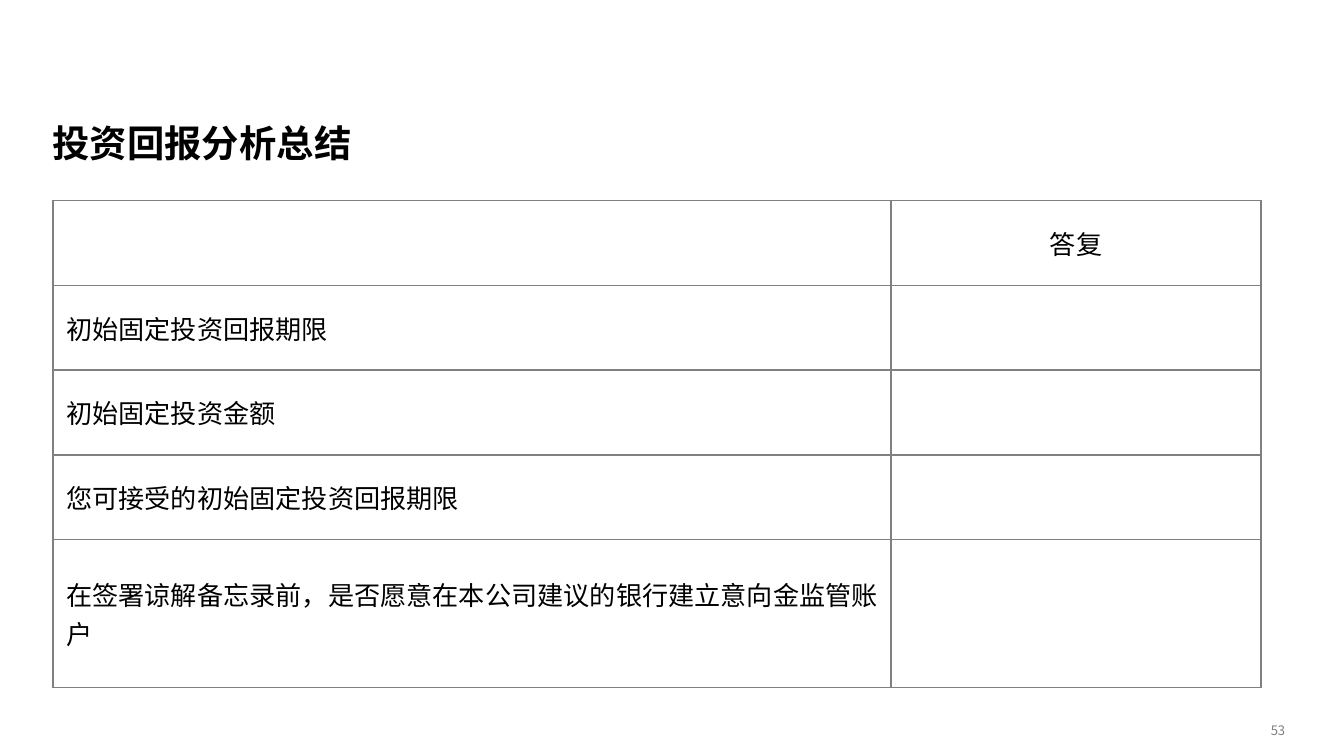
from lxml import etree
from pptx import Presentation
from pptx.dml.color import RGBColor
from pptx.enum.text import MSO_ANCHOR, PP_ALIGN
from pptx.oxml.ns import qn
from pptx.util import Pt

MIDDLE, BOTTOM = MSO_ANCHOR.MIDDLE, MSO_ANCHOR.BOTTOM
LEFT, CENTER, RIGHT = PP_ALIGN.LEFT, PP_ALIGN.CENTER, PP_ALIGN.RIGHT
FONT = "Noto Sans CJK SC"
GRAY = "808080"


def color(value):
    return RGBColor.from_string(value)


def write(tf, text, size=14, fill="000000", bold=False, align=LEFT, spacing=None):
    p = tf.paragraphs[0]
    p.alignment = align
    p.line_spacing = spacing
    r = p.add_run()
    r.text = text
    r.font.size = Pt(size)
    r.font.bold = bold
    r.font.name = FONT
    r.font.color.rgb = color(fill)
    etree.SubElement(r.font._element, qn("a:ea"), typeface=FONT)


prs = Presentation()
prs.slide_width, prs.slide_height = Pt(720), Pt(405)
s = prs.slides.add_slide(prs.slide_layouts[6])

texts = [
    ((28, 63.5, 661, 25), BOTTOM, "投资回报分析总结", dict(size=20, bold=True, spacing=0.9)),
    ((660, 387.5, 28.5, 8), MIDDLE, "53", dict(size=7, fill=GRAY, align=RIGHT)),
]
for box, anchor, text, style in texts:
    tf = s.shapes.add_textbox(*map(Pt, box)).text_frame
    tf.word_wrap = True
    tf.vertical_anchor = anchor
    tf.margin_left = tf.margin_right = tf.margin_top = tf.margin_bottom = 0
    write(tf, text, **style)

rows = [
    ("", "答复"),
    ("初始固定投资回报期限", ""),
    ("初始固定投资金额", ""),
    ("您可接受的初始固定投资回报期限", ""),
    ("在签署谅解备忘录前，是否愿意在本公司建议的银行建立意向金监管账户", ""),
]
widths = [449, 198.4]
heights = [45.4] * 4 + [79.4]
table = s.shapes.add_table(
    len(rows), len(widths), Pt(28.3), Pt(107.5), Pt(sum(widths)), Pt(sum(heights))
).table
table.first_row = table.horz_banding = False
for column, width in zip(table.columns, widths):
    column.width = Pt(width)

for i, (row, height) in enumerate(zip(rows, heights)):
    table.rows[i].height = Pt(height)
    for j, text in enumerate(row):
        cell = table.cell(i, j)
        cell.vertical_anchor = MIDDLE
        cell.margin_left = Pt(0 if j else 7.2)
        cell.margin_right = cell.margin_top = cell.margin_bottom = 0
        tcPr = cell._tc.get_or_add_tcPr()
        for side in ("a:lnL", "a:lnR", "a:lnT", "a:lnB"):
            ln = etree.SubElement(tcPr, qn(side), w=str(Pt(1)))
            solid = etree.SubElement(ln, qn("a:solidFill"))
            etree.SubElement(solid, qn("a:srgbClr"), val=GRAY)
        cell.fill.background()
        if text:
            write(cell.text_frame, text, align=CENTER if j else LEFT)

prs.save("out.pptx")
